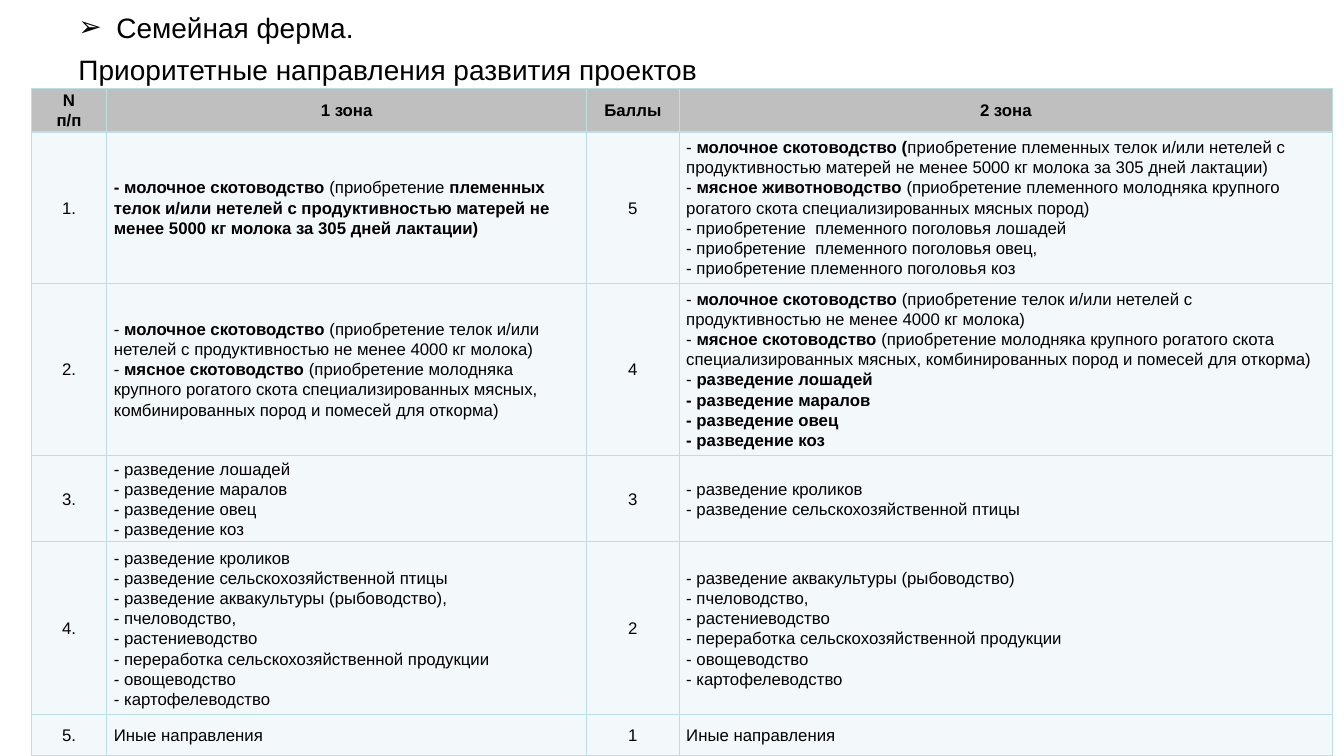
from dataclasses import dataclass

from lxml.etree import SubElement
from pptx import Presentation
from pptx.dml.color import RGBColor
from pptx.enum.text import MSO_ANCHOR, PP_ALIGN
from pptx.oxml import parse_xml
from pptx.oxml.ns import nsdecls, qn
from pptx.util import Pt


@dataclass(frozen=True)
class Theme:
    font: str = "Arial"
    title_size: float = 20
    table_size: float = 12
    text: str = "000000"
    header_fill: str = "BFBFBF"
    body_fill: str = "F3F9FA"
    border: str = "BBE0E3"


THEME = Theme()

TITLE = "Семейная ферма."
SUBTITLE = "Приоритетные направления развития проектов"

# Asterisks switch bold on and off
DAIRY = "- *молочное скотоводство *(приобретение телок и/или нетелей с продуктивностью не менее 4000 кг молока)"
BEEF = ("- *мясное скотоводство *(приобретение молодняка крупного рогатого скота "
        "специализированных мясных, комбинированных пород и помесей для откорма)")
PEDIGREE = ("племенных телок и/или нетелей с продуктивностью матерей не менее "
            "5000 кг молока за 305 дней лактации)")
HERDS = ["- разведение лошадей", "- разведение маралов", "- разведение овец", "- разведение коз"]
SMALL_FARMING = ["- разведение кроликов", "- разведение сельскохозяйственной птицы"]
CROPS = ["- пчеловодство,", "- растениеводство", "- переработка сельскохозяйственной продукции",
         "- овощеводство", "- картофелеводство"]
OTHER = ["Иные направления"]

HEADER = ["*N\vп/п*", "*1 зона*", "*Баллы*", "*2 зона*"]
# Each row: points, first zone, second zone
ROWS = [
    (5,
     [f"*- молочное скотоводство *(приобретение *{PEDIGREE}*"],
     [f"- *молочное скотоводство (*приобретение {PEDIGREE}",
      "- *мясное животноводство *(приобретение племенного молодняка крупного "
      "рогатого скота специализированных мясных пород)",
      "- приобретение  племенного поголовья лошадей",
      "- приобретение  племенного поголовья овец,",
      "- приобретение племенного поголовья коз"]),
    (4,
     [DAIRY, BEEF],
     [DAIRY, BEEF, "- *разведение лошадей*"] + [f"*{herd}*" for herd in HERDS[1:]]),
    (3, HERDS, SMALL_FARMING),
    (2,
     SMALL_FARMING + ["- разведение аквакультуры (рыбоводство),"] + CROPS,
     ["- разведение аквакультуры (рыбоводство)"] + CROPS),
    (1, OTHER, OTHER),
]
COLUMN_WIDTHS = [54, 342.7, 66.2, 466.6]
ROW_HEIGHTS = [30.7, 108, 122.8, 61.4, 123.6, 28.8]


def write_paragraph(paragraph, text, *, size, align, line_spacing, space_after=0):
    paragraph.alignment = align
    paragraph.line_spacing = line_spacing
    paragraph.space_before = Pt(0)
    paragraph.space_after = Pt(space_after)
    for index, part in enumerate(text.split("*")):
        for line_index, line in enumerate(part.split("\v")):
            if line_index:
                paragraph.add_line_break()
            if not line:
                continue
            run = paragraph.add_run()
            run.text = line
            run.font.name = THEME.font
            run.font.size = Pt(size)
            run.font.bold = index % 2 == 1
            run.font.color.rgb = RGBColor.from_string(THEME.text)


def write_lines(text_frame, lines, **text_format):
    for index, line in enumerate(lines):
        paragraph = text_frame.add_paragraph() if index else text_frame.paragraphs[0]
        write_paragraph(paragraph, line, **text_format)


def add_bullet(paragraph, character, indent):
    properties = paragraph._p.get_or_add_pPr()
    properties.set("marL", str(Pt(indent)))
    properties.set("indent", str(-Pt(indent)))
    SubElement(properties, qn("a:buFont"), typeface=THEME.font)
    SubElement(properties, qn("a:buChar"), char=character)


def add_heading(slide):
    box = slide.shapes.add_textbox(Pt(49), Pt(0), Pt(856), Pt(63.4))
    box.text_frame.word_wrap = True
    write_lines(box.text_frame, [TITLE, SUBTITLE], size=THEME.title_size,
                align=PP_ALIGN.JUSTIFY, line_spacing=1.15, space_after=3)
    add_bullet(box.text_frame.paragraphs[0], "➢", 27)


def set_borders(cell):
    properties = cell._tc.get_or_add_tcPr()
    for index, side in enumerate(("lnL", "lnR", "lnT", "lnB")):
        properties.insert(index, parse_xml(
            f'<a:{side} {nsdecls("a")} w="{Pt(1)}"><a:solidFill>'
            f'<a:srgbClr val="{THEME.border}"/></a:solidFill></a:{side}>'))


def fill_cell(cell, lines, *, fill, align):
    cell.margin_left = cell.margin_right = Pt(5)
    cell.margin_top = cell.margin_bottom = Pt(0)
    cell.vertical_anchor = MSO_ANCHOR.MIDDLE
    cell.fill.solid()
    cell.fill.fore_color.rgb = RGBColor.from_string(fill)
    set_borders(cell)
    write_lines(cell.text_frame, lines, size=THEME.table_size, align=align, line_spacing=1.07)


def add_priorities_table(slide):
    frame = slide.shapes.add_table(len(ROW_HEIGHTS), len(COLUMN_WIDTHS), Pt(22.3), Pt(63.4),
                                   Pt(sum(COLUMN_WIDTHS)), Pt(sum(ROW_HEIGHTS)))
    table = frame.table
    for column, width in zip(table.columns, COLUMN_WIDTHS):
        column.width = Pt(width)
    for row, height in zip(table.rows, ROW_HEIGHTS):
        row.height = Pt(height)

    # Header row
    for cell, title in zip(table.rows[0].cells, HEADER):
        fill_cell(cell, [title], fill=THEME.header_fill, align=PP_ALIGN.CENTER)

    # Numbers and points are centred, zones are left-aligned
    for number, (points, first_zone, second_zone) in enumerate(ROWS, start=1):
        contents = [[f"{number}."], first_zone, [str(points)], second_zone]
        for index, (cell, lines) in enumerate(zip(table.rows[number].cells, contents)):
            align = PP_ALIGN.LEFT if index % 2 else PP_ALIGN.CENTER
            fill_cell(cell, lines, fill=THEME.body_fill, align=align)


def main():
    presentation = Presentation()
    presentation.slide_width = Pt(960)
    presentation.slide_height = Pt(540)
    slide = presentation.slides.add_slide(presentation.slide_layouts[6])
    add_heading(slide)
    add_priorities_table(slide)
    presentation.save("out.pptx")


if __name__ == "__main__":
    main()
